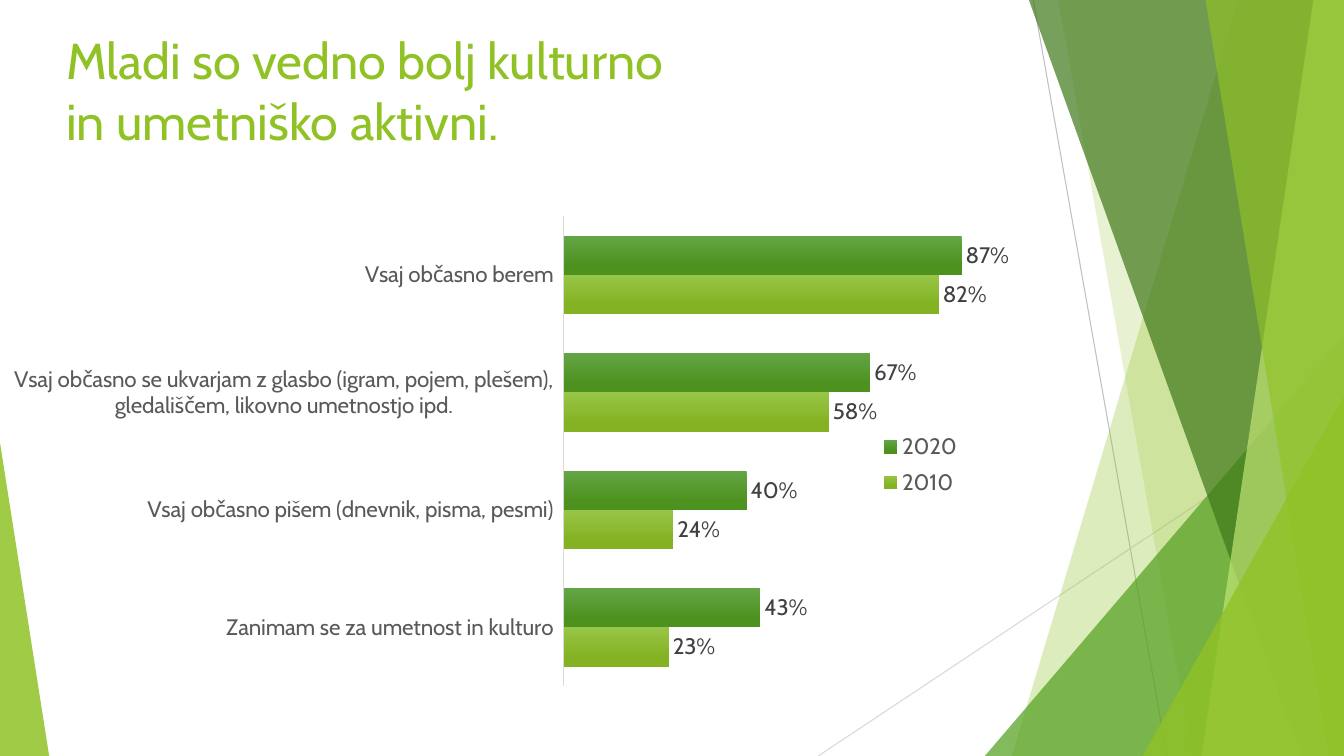
from lxml.etree import SubElement
from pptx import Presentation
from pptx.chart.data import CategoryChartData as ChartData
from pptx.dml.color import RGBColor
from pptx.enum.chart import XL_CHART_TYPE as ChartType
from pptx.enum.chart import XL_LABEL_POSITION as LabelPosition
from pptx.enum.chart import XL_LEGEND_POSITION as LegendPosition
from pptx.enum.chart import XL_TICK_LABEL_POSITION as TickLabels
from pptx.enum.chart import XL_TICK_MARK as TickMark
from pptx.enum.shapes import MSO_CONNECTOR as Connector
from pptx.enum.shapes import MSO_SHAPE as Shape
from pptx.oxml import parse_xml
from pptx.oxml.ns import nsdecls, qn
from pptx.util import Cm, Pt

FONT = "Cabin"
WIDTH, HEIGHT = 33.87, 19.05  # centimetres

LIME = RGBColor(0x90, 0xC2, 0x26)
GREEN = RGBColor(0x54, 0xA0, 0x21)
DARK_GREEN = RGBColor(0x3F, 0x78, 0x19)
PALE_LIME = RGBColor(0xC0, 0xE4, 0x74)
LIME_TOP = RGBColor(0x97, 0xC5, 0x47)
LIME_BASE = RGBColor(0x84, 0xB2, 0x23)
GREEN_TOP = RGBColor(0x63, 0xA5, 0x45)
GREEN_BASE = RGBColor(0x4D, 0x92, 0x1E)
GRAY = RGBColor(0xBF, 0xBF, 0xBF)
LIGHT_GRAY = RGBColor(0xD9, 0xD9, 0xD9)
AXIS_TEXT = RGBColor(0x59, 0x59, 0x59)
LABEL_TEXT = RGBColor(0x40, 0x40, 0x40)

CATEGORIES = [
    "Zanimam se za umetnost in kulturo",
    "Vsaj občasno pišem (dnevnik, pisma, pesmi)",
    "Vsaj občasno se ukvarjam z glasbo (igram, pojem, plešem), "
    "gledališčem, likovno umetnostjo ipd.",
    "Vsaj občasno berem",
]
# Name, values, top colour, base colour
SERIES = [
    ("2010", (0.23, 0.24, 0.58, 0.82), LIME_TOP, LIME_BASE),
    ("2020", (0.43, 0.40, 0.67, 0.87), GREEN_TOP, GREEN_BASE),
]


def set_font(font, size, color):
    font.name = FONT
    font.size = Pt(size)
    font.color.rgb = color


def add_text(slide, text, left, top, width, height, size, color):
    box = slide.shapes.add_textbox(Cm(left), Cm(top), Cm(width), Cm(height))
    box.text_frame.word_wrap = True
    para = box.text_frame.paragraphs[0]
    para.text = text
    for span in para.runs:
        set_font(span.font, size, color)


def paint(shape, color, opacity):
    shape.shadow.inherit = False
    shape.line.fill.background()
    shape.fill.solid()
    shape.fill.fore_color.rgb = color
    color_node = shape.fill._xPr.find(qn("a:solidFill"))[0]
    SubElement(color_node, qn("a:alpha"), val=str(opacity * 1000))


def add_panel(slide, top_x, bottom_x, color, opacity):
    """Panel with a slanted left side, reaching the right edge of the slide."""
    outline = slide.shapes.build_freeform(Cm(top_x), 0)
    outline.add_line_segments([
        (Cm(WIDTH), 0), (Cm(WIDTH), Cm(HEIGHT)), (Cm(bottom_x), Cm(HEIGHT)),
    ])
    paint(outline.convert_to_shape(), color, opacity)


def add_corner(slide, left, right, top, apex, color, opacity):
    """Triangle standing on the bottom edge of the slide."""
    corner = slide.shapes.add_shape(
        Shape.ISOSCELES_TRIANGLE,
        Cm(left), Cm(top), Cm(right - left), Cm(HEIGHT - top))
    corner.adjustments[0] = apex
    paint(corner, color, opacity)


def add_line(slide, start, end, color):
    points = [Cm(value) for value in (*start, *end)]
    line = slide.shapes.add_connector(Connector.STRAIGHT, *points)
    line.line.color.rgb = color
    line.line.width = Pt(0.75)
    SubElement(line._element.spPr, qn("a:effectLst"))


def add_decoration(slide):
    add_line(slide, (26.04, 0), (29.41, HEIGHT), GRAY)
    add_line(slide, (WIDTH, 10.24), (20.62, HEIGHT), LIGHT_GRAY)
    add_panel(slide, 31.2, 25.5, LIME, 30)
    add_panel(slide, 26.67, 30.05, LIME, 20)
    add_corner(slide, 24.82, WIDTH, 8.46, 1, GREEN, 72)
    add_panel(slide, 25.93, 32.79, DARK_GREEN, 70)
    add_panel(slide, 33.1, 30.28, PALE_LIME, 70)
    add_panel(slide, 30.38, 33.48, LIME, 65)
    add_corner(slide, 28.8, WIDTH, 9.98, 1, LIME, 80)
    add_corner(slide, 0, 1.24, 11.15, 0, LIME, 85)


def layout_xml(x, y, w, h, inner=False):
    target = '<c:layoutTarget val="inner"/>' if inner else ""
    sizes = "".join(f'<c:{name} val="{value}"/>'
                    for name, value in zip("xywh", (x, y, w, h)))
    return parse_xml(
        f'<c:layout {nsdecls("c")}><c:manualLayout>{target}'
        f'<c:xMode val="edge"/><c:yMode val="edge"/>{sizes}'
        '</c:manualLayout></c:layout>')


def style_series(series, top_color, base_color):
    fill = series.format.fill
    fill.gradient()
    fill.gradient_angle = 270
    for stop, color, position in zip(
            fill.gradient_stops, (top_color, base_color), (0, 0.78)):
        stop.color.rgb = color
        stop.position = position
    labels = series.data_labels
    labels.show_value = True
    labels.position = LabelPosition.OUTSIDE_END
    labels.number_format = "0%"
    labels.number_format_is_linked = False
    set_font(labels.font, 16, LABEL_TEXT)


def style_axes(chart):
    axis = chart.category_axis
    axis.major_tick_mark = axis.minor_tick_mark = TickMark.NONE
    axis.tick_label_position = TickLabels.LOW
    axis.format.line.color.rgb = LIGHT_GRAY
    axis.format.line.width = Pt(1)
    set_font(axis.tick_labels.font, 16, AXIS_TEXT)
    scale = chart.value_axis
    scale.minimum_scale, scale.maximum_scale = 0, 1
    scale.has_major_gridlines = False
    scale.visible = False


def style_legend(chart):
    chart.has_legend = True
    legend = chart.legend
    legend.position = LegendPosition.BOTTOM
    legend.include_in_layout = True
    set_font(legend.font, 16, AXIS_TEXT)
    place_part(legend._element, layout_xml(0.84, 0.41, 0.09, 0.15), 1)


def place_part(node, layout, index):
    for old in node.findall(qn("c:layout")):
        node.remove(old)
    node.insert(index, layout)


def add_activity_chart(slide):
    data = ChartData(number_format="0%")
    data.categories = CATEGORIES
    for name, values, *_ in SERIES:
        data.add_series(name, values)
    chart = slide.shapes.add_chart(
        ChartType.BAR_CLUSTERED,
        Cm(0), Cm(5.18), Cm(26.21), Cm(13.46), data).chart
    chart.has_title = False
    set_font(chart.font, 16, RGBColor(0, 0, 0))
    plot = chart.plots[0]
    plot.gap_width, plot.overlap = 100, 0
    plot.vary_by_categories = False
    for series, (_, _, top_color, base_color) in zip(plot.series, SERIES):
        style_series(series, top_color, base_color)
    style_axes(chart)
    style_legend(chart)
    plot_area = chart._chartSpace.chart.plotArea
    place_part(plot_area, layout_xml(0.542, 0.02, 0.44, 0.88, inner=True), 0)


def main():
    deck = Presentation()
    deck.slide_width, deck.slide_height = Cm(WIDTH), Cm(HEIGHT)
    page = deck.slides.add_slide(deck.slide_layouts[6])
    add_decoration(page)
    add_text(page, "Mladi so vedno bolj kulturno \vin umetniško aktivni.",
             left=1.42, top=0.61, width=25.5, height=3.66,
             size=36, color=LIME)
    add_activity_chart(page)
    deck.save("out.pptx")


if __name__ == "__main__":
    main()
